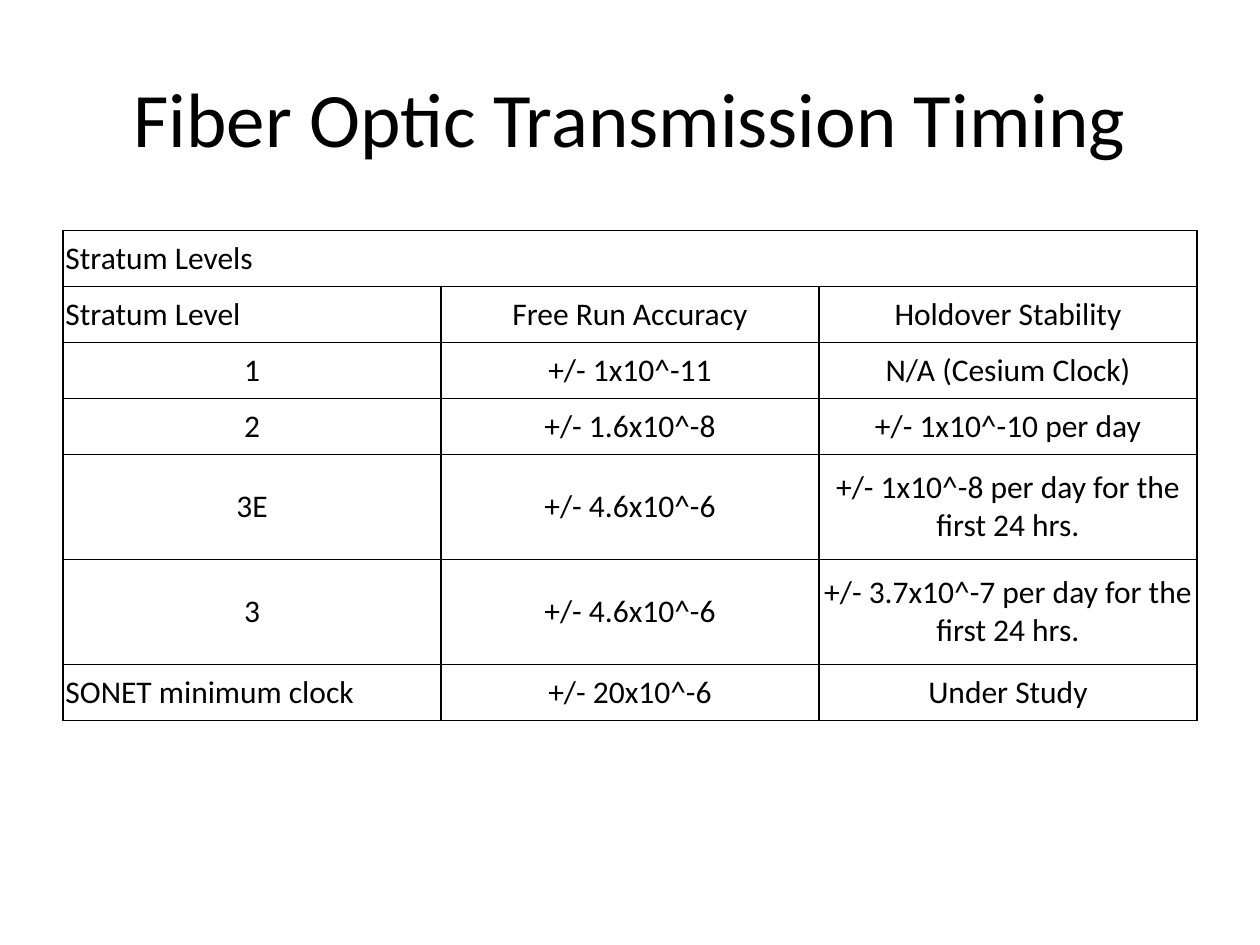
from lxml.etree import SubElement
from pptx import Presentation
from pptx.dml.color import RGBColor
from pptx.enum.text import MSO_ANCHOR, PP_ALIGN
from pptx.oxml.ns import qn
from pptx.util import Inches, Pt

# Content
TITLE = "Fiber Optic Transmission Timing"
CAPTION = "Stratum Levels"
HEADINGS = ("Stratum Level", "Free Run Accuracy", "Holdover Stability")
CLOCKS = [
    ("1", "+/- 1x10^-11", "N/A (Cesium Clock)"),
    ("2", "+/- 1.6x10^-8", "+/- 1x10^-10 per day"),
    ("3E", "+/- 4.6x10^-6", "+/- 1x10^-8 per day for the first 24 hrs."),
    ("3", "+/- 4.6x10^-6", "+/- 3.7x10^-7 per day for the first 24 hrs."),
    ("SONET minimum clock", "+/- 20x10^-6", "Under Study"),
]
LEFT_ALIGNED = {CAPTION, HEADINGS[0], CLOCKS[-1][0]}

# Format
INK, PAPER = "000000", "FFFFFF"
ONE_LINE, TWO_LINES = Pt(32), Pt(60)
INSET = Inches(0.02)
CELL_FORMAT = {
    "vertical_anchor": MSO_ANCHOR.MIDDLE,
    "margin_left": INSET, "margin_right": INSET,
    "margin_top": INSET, "margin_bottom": INSET,
}


def color(value):
    return RGBColor.from_string(value)


def write(frame, text, size, align):
    paragraph = frame.paragraphs[0]
    paragraph.alignment = align
    run = paragraph.add_run()
    run.text = text
    for name, value in {"name": "Calibri", "size": Pt(size)}.items():
        setattr(run.font, name, value)
    run.font.color.rgb = color(INK)


def style_cell(cell):
    for name, value in CELL_FORMAT.items():
        setattr(cell, name, value)
    # Borders come before the fill in the cell properties
    properties = cell._tc.get_or_add_tcPr()
    for side in ("lnL", "lnR", "lnT", "lnB"):
        border = SubElement(properties, qn(f"a:{side}"), w=str(Pt(1)))
        SubElement(SubElement(border, qn("a:solidFill")), qn("a:srgbClr"), val=INK)
    cell.fill.solid()
    cell.fill.fore_color.rgb = color(PAPER)


deck = Presentation()
deck.slide_width, deck.slide_height = Inches(10), Inches(7.5)
slide = deck.slides.add_slide(deck.slide_layouts[6])
margin = int(deck.slide_width * 0.05)
content_width = deck.slide_width - 2 * margin

# Title
heading = slide.shapes.add_textbox(
    margin, int(deck.slide_height * 0.04), content_width, Inches(1.25)).text_frame
heading.word_wrap = True
heading.vertical_anchor = MSO_ANCHOR.MIDDLE
write(heading, TITLE, 44, PP_ALIGN.CENTER)

# Stratum table: a caption row across all columns, headings, then clocks
rows = [(CAPTION, "", ""), HEADINGS, *CLOCKS]
heights = [TWO_LINES if "first" in row[-1] else ONE_LINE for row in rows]
strata = slide.shapes.add_table(
    len(rows), len(HEADINGS), margin, Inches(1.83), content_width, sum(heights)).table
strata.first_row = strata.horz_banding = False
for r, (row, height) in enumerate(zip(rows, heights)):
    strata.rows[r].height = height
    for c, text in enumerate(row):
        cell = strata.cell(r, c)
        style_cell(cell)
        if text:
            align = PP_ALIGN.LEFT if text in LEFT_ALIGNED else PP_ALIGN.CENTER
            write(cell.text_frame, text, 18, align)
strata.cell(0, 0).merge(strata.cell(0, len(HEADINGS) - 1))

deck.save("out.pptx")
